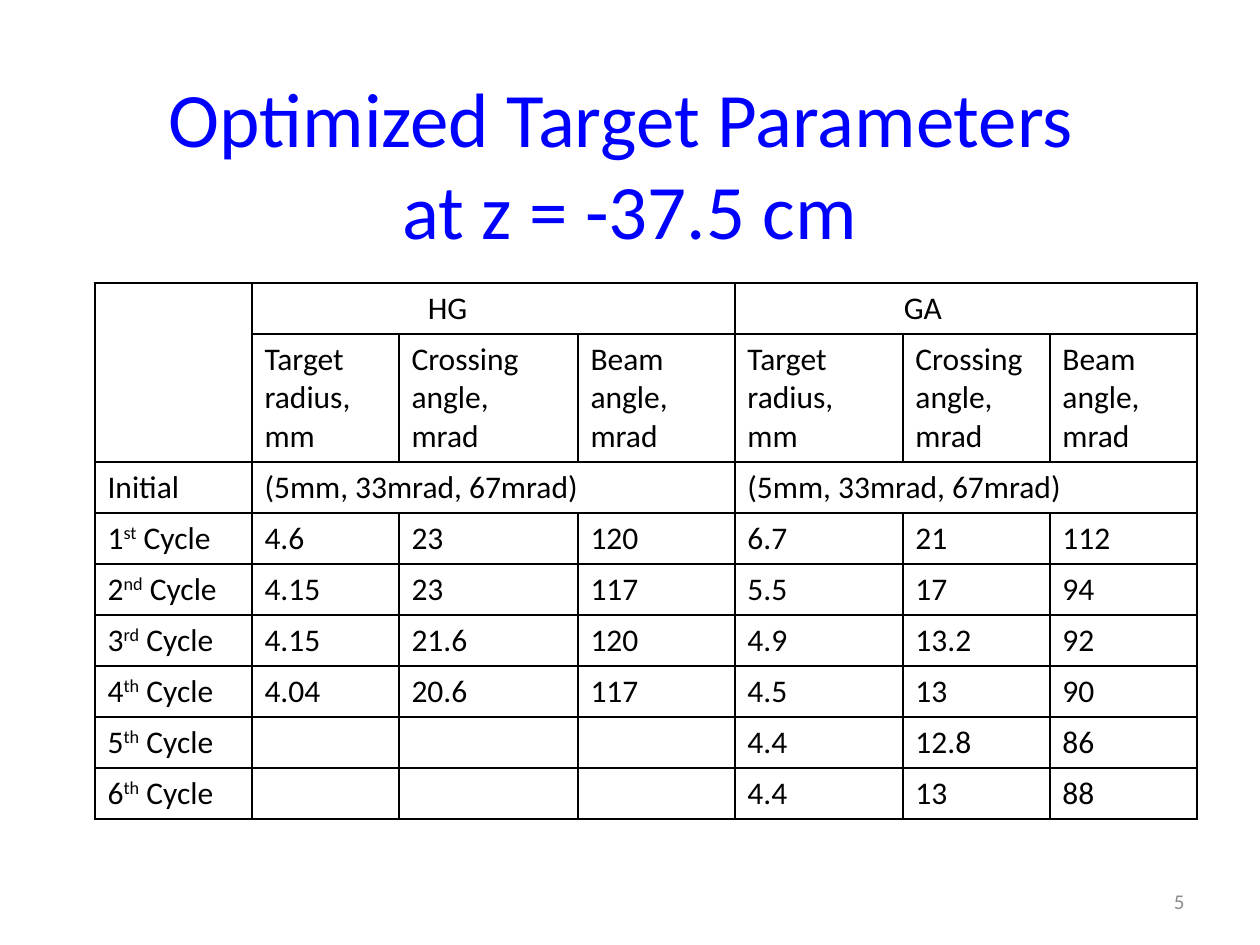
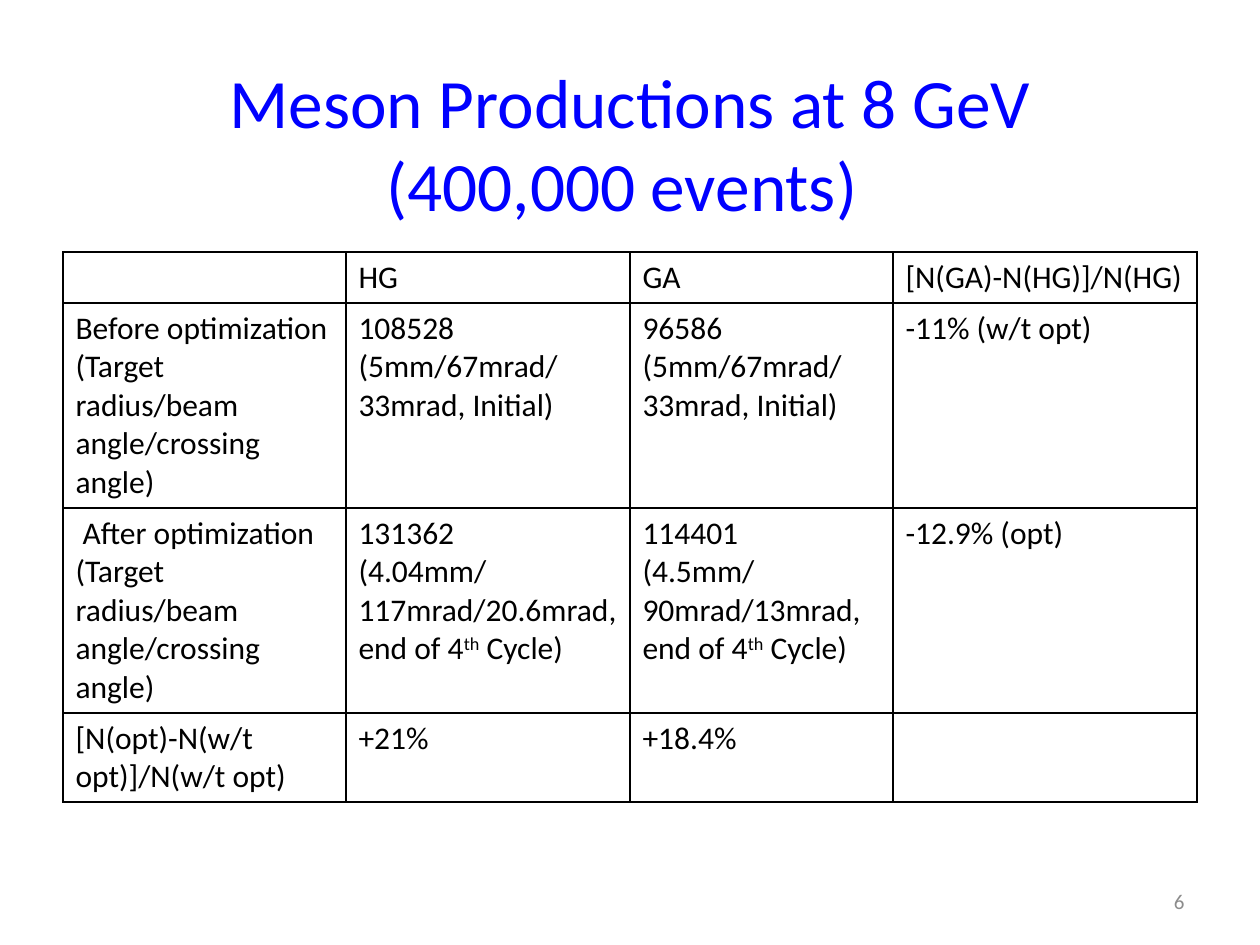
import pptx
import pptx.dml.color
import pptx.enum.text
import pptx.oxml
import pptx.oxml.ns
import pptx.util

ALIGN = pptx.enum.text.PP_ALIGN
MIDDLE = pptx.enum.text.MSO_ANCHOR.MIDDLE
FACE = "Calibri"
BLUE, BLACK, GREY, WHITE = "0000FF", "000000", "8C8C8C", "FFFFFF"
LINE = 51
TRIPLE = "(5mm, 33mrad, 67mrad)"
HEADS = ["Target radius,\nmm", "Crossing angle,\nmrad", "Beam angle,\nmrad"]
TERMS = "(Target radius/beam angle/crossing angle)"
START = "(5mm/67mrad/33mrad, Initial)"

CYCLES = [
    ["1^st^ Cycle", "4.6", "23", "120", "6.7", "21", "112"],
    ["2^nd^ Cycle", "4.15", "23", "117", "5.5", "17", "94"],
    ["3^rd^ Cycle", "4.15", "21.6", "120", "4.9", "13.2", "92"],
    ["4^th^ Cycle", "4.04", "20.6", "117", "4.5", "13", "90"],
    ["5^th^ Cycle", "", "", "", "4.4", "12.8", "86"],
    ["6^th^ Cycle", "", "", "", "4.4", "13", "88"],
]
TARGETS = [
    ["", "HG", "", "", "GA", "", ""],
    ["", *HEADS, *HEADS],
    ["Initial", TRIPLE, "", "", TRIPLE, "", ""],
    *CYCLES,
]
MESONS = [
    ["", "HG", "GA", "[N(GA)-N(HG)]/N(HG)"],
    ["Before optimization\n" + TERMS, "108528\n" + START,
     "96586\n" + START, "-11% (w/t opt)"],
    [" After optimization\n" + TERMS,
     "131362\n(4.04mm/117mrad/20.6mrad, end of 4^th^ Cycle)",
     "114401\n(4.5mm/90mrad/13mrad, end of 4^th^ Cycle)", "-12.9% (opt)"],
    ["[N(opt)-N(w/t opt)]/N(w/t opt)", "+21%", "+18.4%", ""],
]


def px(size):
    return pptx.util.Emu(round(size * 914400 / 126))


def tint(code):
    return pptx.dml.color.RGBColor.from_string(code)


def apply(item, values):
    for name, value in values.items():
        setattr(item, name, value)


def style(font, size, color):
    apply(font, {"name": FACE, "size": pptx.util.Pt(size)})
    font.color.rgb = tint(color)


def write(frame, text, size, color, align=ALIGN.LEFT):
    for row, line in enumerate(text.split("\n")):
        para = frame.add_paragraph() if row else frame.paragraphs[0]
        para.alignment = align
        style(para.font, size, color)
        for part, words in enumerate(line.split("^")):
            if words:
                run = para.add_run()
                run.text = words
                style(run.font, size, color)
                if part % 2:
                    run._r.get_or_add_rPr().set("baseline", "30000")


def label(slide, box, text, size, color, align):
    frame = slide.shapes.add_textbox(*map(px, box)).text_frame
    apply(frame, {"word_wrap": True, "vertical_anchor": MIDDLE})
    write(frame, text, size, color, align)


def border(cell):
    props = cell._tc.get_or_add_tcPr()
    space = pptx.oxml.ns.nsdecls("a")
    for spot, side in enumerate("LRTB"):
        edge = pptx.oxml.parse_xml(
            f'<a:ln{side} {space} w="12700"><a:solidFill>'
            f'<a:srgbClr val="{BLACK}"/></a:solidFill></a:ln{side}>')
        props.insert(spot, edge)


def grid(slide, left, top, cols, rows, data):
    box = map(px, (left, top, sum(cols), sum(rows)))
    table = slide.shapes.add_table(len(rows), len(cols), *box).table
    apply(table, {"first_row": False, "horz_banding": False})
    for col, width in zip(table.columns, cols):
        col.width = px(width)
    for row, height in zip(table.rows, rows):
        row.height = px(height)
    for y, texts in enumerate(data):
        for x, text in enumerate(texts):
            cell = table.cell(y, x)
            write(cell.text_frame, text, 18, BLACK)
            cell.fill.solid()
            cell.fill.fore_color.rgb = tint(WHITE)
            border(cell)
    return table


def page(deck, number, title, box, size):
    slide = deck.slides.add_slide(deck.slide_layouts[6])
    label(slide, box, title, size, BLUE, ALIGN.CENTER)
    label(slide, (903, 876, 294, 50), str(number), 12, GREY, ALIGN.RIGHT)
    return slide


def main():
    deck = pptx.Presentation()
    apply(deck, {"slide_width": px(1260), "slide_height": px(945)})

    slide = page(deck, 5, "Optimized Target Parameters \nat z = -37.5 cm",
                 (63, 42, 1134, 242), 44)
    cols = [157, 147, 179, 157, 168, 147, 147]
    rows = [LINE, 128] + [LINE] * 7
    table = grid(slide, 95, 283, cols, rows, TARGETS)
    table.cell(0, 0).merge(table.cell(1, 0))
    for first, inset in ((1, 176), (4, 169)):
        for row in (0, 2):
            table.cell(row, first).merge(table.cell(row, first + 2))
        table.cell(0, first).margin_left = px(inset)

    slide = page(deck, 6, "Meson Productions at 8 GeV\n(400,000 events) ",
                 (63, 63, 1134, 158), 39.6)
    grid(slide, 63, 252, [283, 284, 263, 304], [LINE, 205, 205, 89], MESONS)

    deck.save("out.pptx")


if __name__ == "__main__":
    main()
